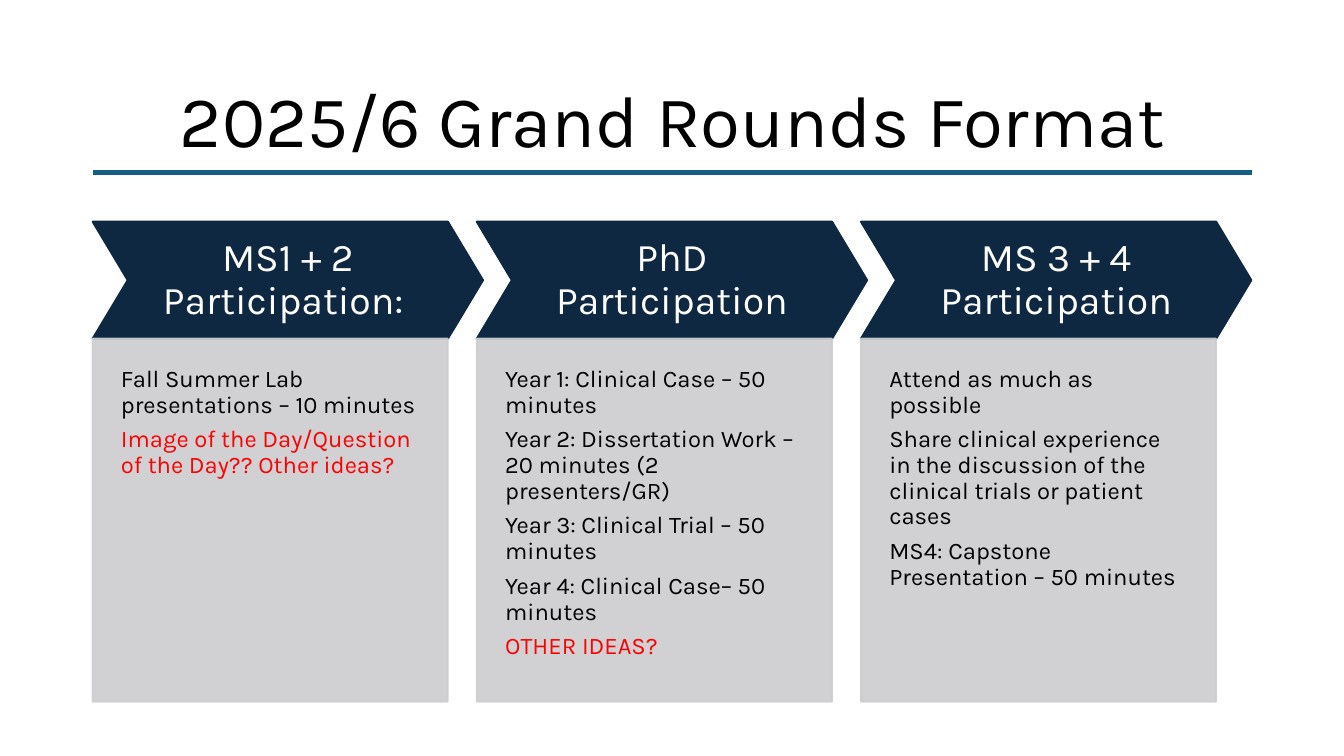
"""Build the Grand Rounds format slide: a ruled title above three chevron-headed columns."""
from dataclasses import dataclass

import lxml.etree
import pptx
import pptx.dml.color
import pptx.enum.shapes
import pptx.enum.text
import pptx.oxml.ns
import pptx.util

FONT = "Karla"
COLORS = {
    "background": "FFFFFF",
    "black": "000000",
    "white": "FFFFFF",
    "red": "FF0000",
    "navy": "0E2841",
    "gray": "CCCDCF",
    "rule": "156082",
}
Inches = pptx.util.Inches
Align = pptx.enum.text.PP_ALIGN
Anchor = pptx.enum.text.MSO_ANCHOR
Preset = pptx.enum.shapes.MSO_SHAPE

LEFT, COLUMN_PITCH = 0.92, 3.81
HEADER_TOP, HEADER_WIDTH, HEADER_HEIGHT = 2.2, 3.87, 1.16
BODY_WIDTH, BODY_HEIGHT = 3.52, 3.6


@dataclass(frozen=True)
class Line:
    text: str
    color: str = "black"


@dataclass(frozen=True)
class Column:
    heading: str
    lines: tuple[Line, ...]


@dataclass(frozen=True)
class TextStyle:
    size: float
    align: Align
    anchor: Anchor
    insets: tuple[float, float, float, float]
    space_after: float = 0


TITLE_STYLE = TextStyle(52, Align.CENTER, Anchor.MIDDLE, (0.1, 0.05, 0.1, 0.05))
HEADING_STYLE = TextStyle(28, Align.CENTER, Anchor.MIDDLE, (0.14, 0.14, 0.14, 0.14))
BODY_STYLE = TextStyle(17, Align.LEFT, Anchor.TOP, (0.28, 0.28, 0.28, 0.56), 6.4)

COLUMNS = (
    Column("MS1 + 2 Participation: ", (
        Line("Fall Summer Lab presentations – 10 minutes"),
        Line("Image of the Day/Question of the Day?? Other ideas?", "red"),
    )),
    Column("PhD Participation", (
        Line("Year 1: Clinical Case – 50 minutes"),
        Line("Year 2: Dissertation Work – 20 minutes (2 presenters/GR)"),
        Line("Year 3: Clinical Trial – 50 minutes"),
        Line("Year 4: Clinical Case– 50 minutes"),
        Line("OTHER IDEAS?", "red"),
    )),
    Column("MS 3 + 4 Participation", (
        Line("Attend as much as possible"),
        Line("Share clinical experience in the discussion of the clinical trials or patient cases"),
        Line("MS4: Capstone Presentation – 50 minutes"),
    )),
)


def rgb(name: str) -> pptx.dml.color.RGBColor:
    return pptx.dml.color.RGBColor.from_string(COLORS[name])


def write_text(shape, lines: tuple[Line, ...], style: TextStyle) -> None:
    frame = shape.text_frame
    frame.word_wrap = True
    frame.vertical_anchor = style.anchor
    left, top, right, bottom = map(Inches, style.insets)
    frame.margin_left, frame.margin_top = left, top
    frame.margin_right, frame.margin_bottom = right, bottom
    for index, line in enumerate(lines):
        paragraph = frame.add_paragraph() if index else frame.paragraphs[0]
        paragraph.alignment = style.align
        paragraph.line_spacing = 0.9
        paragraph.space_after = pptx.util.Pt(style.space_after)
        run = paragraph.add_run()
        run.text = line.text
        run.font.name = FONT
        run.font.size = pptx.util.Pt(style.size)
        run.font.color.rgb = rgb(line.color)


def add_block(slide, preset: Preset, left: float, top: float, width: float,
              height: float, color: str, opacity: int = 100):
    shape = slide.shapes.add_shape(
        preset, Inches(left), Inches(top), Inches(width), Inches(height))
    shape.shadow.inherit = False
    shape.fill.solid()
    shape.fill.fore_color.rgb = rgb(color)
    shape.line.color.rgb = rgb(color)
    shape.line.width = pptx.util.Pt(1.5)
    if opacity < 100:
        qualified = pptx.oxml.ns.qn
        for color_element in shape._element.spPr.iter(qualified("a:srgbClr")):
            alpha = lxml.etree.SubElement(color_element, qualified("a:alpha"))
            alpha.set("val", str(opacity * 1000))
    return shape


def add_column(slide, column: Column, left: float) -> None:
    header = add_block(slide, Preset.CHEVRON, left, HEADER_TOP,
                       HEADER_WIDTH, HEADER_HEIGHT, "navy")
    header.adjustments[0] = 0.3
    write_text(header, (Line(column.heading, "white"),), HEADING_STYLE)
    body = add_block(slide, Preset.RECTANGLE, left, HEADER_TOP + HEADER_HEIGHT,
                     BODY_WIDTH, BODY_HEIGHT, "gray", 90)
    write_text(body, column.lines, BODY_STYLE)


def add_title(slide) -> None:
    title = slide.shapes.add_textbox(Inches(LEFT), Inches(0.61), Inches(11.5), Inches(1.24))
    write_text(title, (Line("2025/6 Grand Rounds Format"),), TITLE_STYLE)


def add_rule(slide) -> None:
    rule = slide.shapes.add_connector(
        pptx.enum.shapes.MSO_CONNECTOR.STRAIGHT,
        Inches(LEFT), Inches(1.71), Inches(LEFT + 11.5), Inches(1.71))
    rule.line.color.rgb = rgb("rule")
    rule.line.width = pptx.util.Pt(4)
    lxml.etree.SubElement(rule._element.spPr, pptx.oxml.ns.qn("a:effectLst"))


def main() -> None:
    presentation = pptx.Presentation()
    presentation.slide_width = Inches(13.33)
    presentation.slide_height = Inches(7.5)
    slide = presentation.slides.add_slide(presentation.slide_layouts[6])
    slide.background.fill.solid()
    slide.background.fill.fore_color.rgb = rgb("background")
    add_title(slide)
    for index, column in enumerate(COLUMNS):
        add_column(slide, column, LEFT + index * COLUMN_PITCH)
    add_rule(slide)
    presentation.save("out.pptx")


if __name__ == "__main__":
    main()
